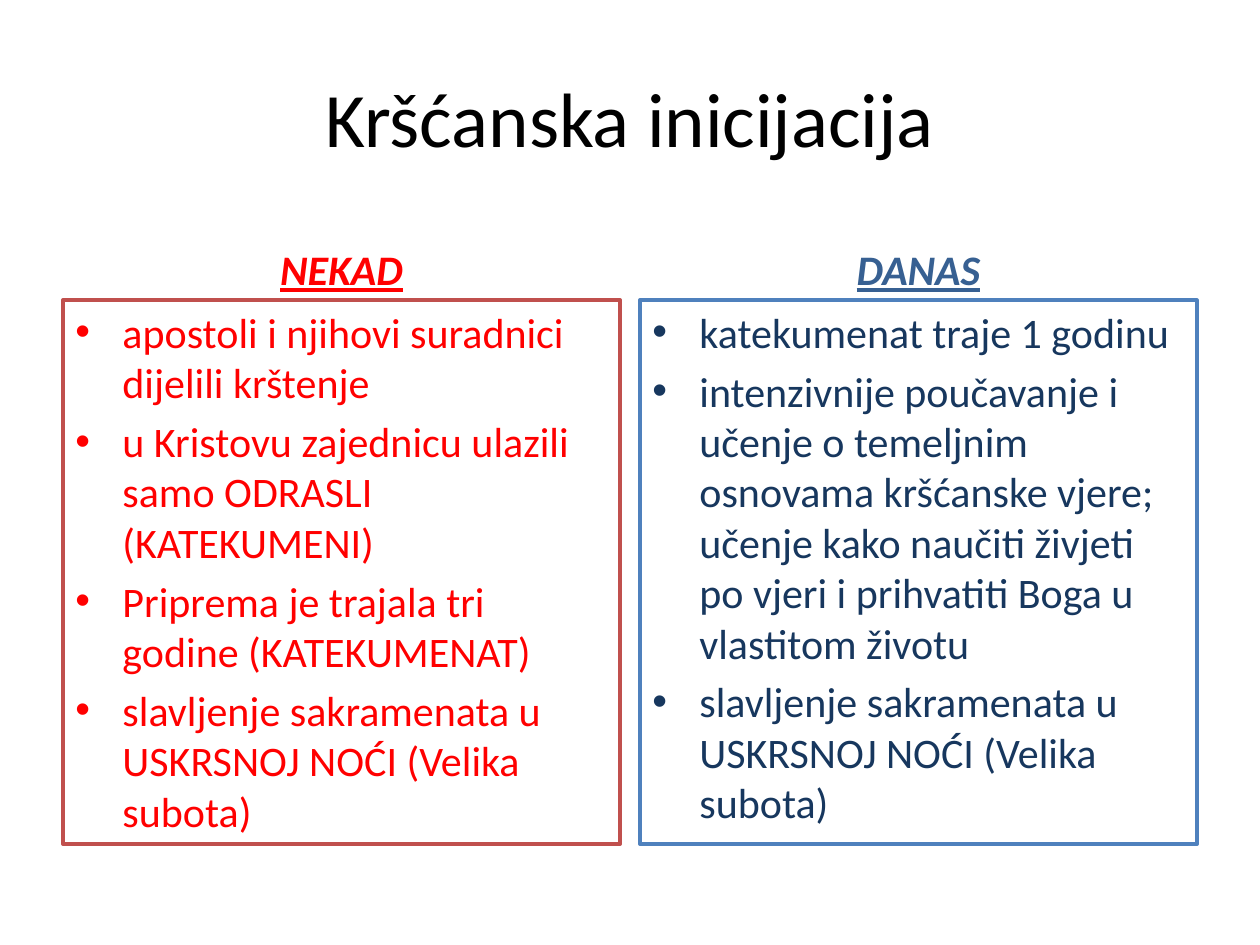
from lxml import etree
from pptx import Presentation
from pptx.dml.color import RGBColor
from pptx.enum.shapes import MSO_SHAPE
from pptx.enum.text import MSO_ANCHOR, PP_ALIGN
from pptx.oxml.ns import qn
from pptx.util import Cm, Pt

RECTANGLE = MSO_SHAPE.RECTANGLE
TOP, MIDDLE, BOTTOM = MSO_ANCHOR.TOP, MSO_ANCHOR.MIDDLE, MSO_ANCHOR.BOTTOM
LEFT, CENTER = PP_ALIGN.LEFT, PP_ALIGN.CENTER

COLORS = {
    "title": "000000",
    "box": "FFFFFF",
    "past": "FF0000",
    "past_border": "C0504D",
    "today_heading": "376092",
    "today": "17375E",
    "today_border": "4F81BD",
}

SLIDE_WIDTH, SLIDE_HEIGHT = 25.4, 19.05
MARGIN = 1.27
COLUMN_WIDTH = 11.23
HEADING_TOP, HEADING_HEIGHT = 4.27, 1.78
BOX_TOP, BOX_HEIGHT = HEADING_TOP + HEADING_HEIGHT, 10.97

COLUMNS = [
    ("NEKAD", "past", "past", "past_border", [
        "apostoli i njihovi suradnici dijelili krštenje",
        "u Kristovu zajednicu ulazili samo ODRASLI (KATEKUMENI)",
        "Priprema je trajala tri godine (KATEKUMENAT)",
        "slavljenje sakramenata u USKRSNOJ NOĆI (Velika subota)",
    ]),
    ("DANAS", "today_heading", "today", "today_border", [
        "katekumenat traje 1 godinu",
        "intenzivnije poučavanje i učenje o temeljnim osnovama kršćanske vjere; "
        "učenje kako naučiti živjeti po vjeri i prihvatiti Boga u vlastitom životu",
        "slavljenje sakramenata u USKRSNOJ NOĆI (Velika subota)",
    ]),
]


class SlideBuilder:
    """Holds the text style and the slide being filled."""

    font_name = "Calibri"
    title_size = 44
    body_size = 24
    space_before = 4.8
    bullet_indent = Cm(0.95)

    def __init__(self, slide):
        self.slide = slide

    def set_text(self, shape, texts, size, color, alignment, anchor):
        """Fill the shape with one paragraph per text and return the paragraphs."""
        frame = shape.text_frame
        frame.word_wrap = True
        frame.vertical_anchor = anchor
        frame.text = "\n".join(texts)
        for paragraph in frame.paragraphs:
            paragraph.alignment = alignment
            paragraph.font.name = self.font_name
            paragraph.font.size = Pt(size)
            paragraph.font.color.rgb = RGBColor.from_string(COLORS[color])
        return frame.paragraphs

    def title(self, text, left, top, width, height):
        shape = self.slide.shapes.add_textbox(Cm(left), Cm(top), Cm(width), Cm(height))
        self.set_text(shape, [text], self.title_size, "title", CENTER, MIDDLE)

    def heading(self, text, color, left, top, width, height):
        shape = self.slide.shapes.add_textbox(Cm(left), Cm(top), Cm(width), Cm(height))
        for paragraph in self.set_text(shape, [text], self.body_size, color, CENTER, BOTTOM):
            paragraph.space_before = Pt(self.space_before)
            paragraph.font.bold = True
            paragraph.font.italic = True
            paragraph.font.underline = True

    def bullet_box(self, items, color, border, left, top, width, height):
        shape = self.slide.shapes.add_shape(
            RECTANGLE, Cm(left), Cm(top), Cm(width), Cm(height))
        shape.shadow.inherit = False
        shape.fill.solid()
        shape.fill.fore_color.rgb = RGBColor.from_string(COLORS["box"])
        shape.line.color.rgb = RGBColor.from_string(COLORS[border])
        shape.line.width = Pt(2)
        for paragraph in self.set_text(shape, items, self.body_size, color, LEFT, TOP):
            paragraph.space_before = Pt(self.space_before)
            self.add_bullet(paragraph)

    def add_bullet(self, paragraph):
        """Give the paragraph a round bullet with a hanging indent."""
        properties = paragraph._p.get_or_add_pPr()
        properties.set("marL", str(self.bullet_indent))
        properties.set("indent", str(-self.bullet_indent))
        bullet_font = etree.Element(qn("a:buFont"), typeface="Arial")
        bullet = etree.Element(qn("a:buChar"), char="•")
        default_font = properties.find(qn("a:defRPr"))
        default_font.addprevious(bullet_font)
        default_font.addprevious(bullet)


def main():
    presentation = Presentation()
    presentation.slide_width = Cm(SLIDE_WIDTH)
    presentation.slide_height = Cm(SLIDE_HEIGHT)
    blank_layout = presentation.slide_layouts[6]
    builder = SlideBuilder(presentation.slides.add_slide(blank_layout))

    builder.title("Kršćanska inicijacija", MARGIN, 0.76, SLIDE_WIDTH - 2 * MARGIN, 3.18)
    column_lefts = (MARGIN, SLIDE_WIDTH - MARGIN - COLUMN_WIDTH)
    for left, (heading, heading_color, color, border, items) in zip(column_lefts, COLUMNS):
        builder.heading(heading, heading_color,
                        left, HEADING_TOP, COLUMN_WIDTH, HEADING_HEIGHT)
        builder.bullet_box(items, color, border,
                           left, BOX_TOP, COLUMN_WIDTH, BOX_HEIGHT)

    presentation.save("out.pptx")


if __name__ == "__main__":
    main()
